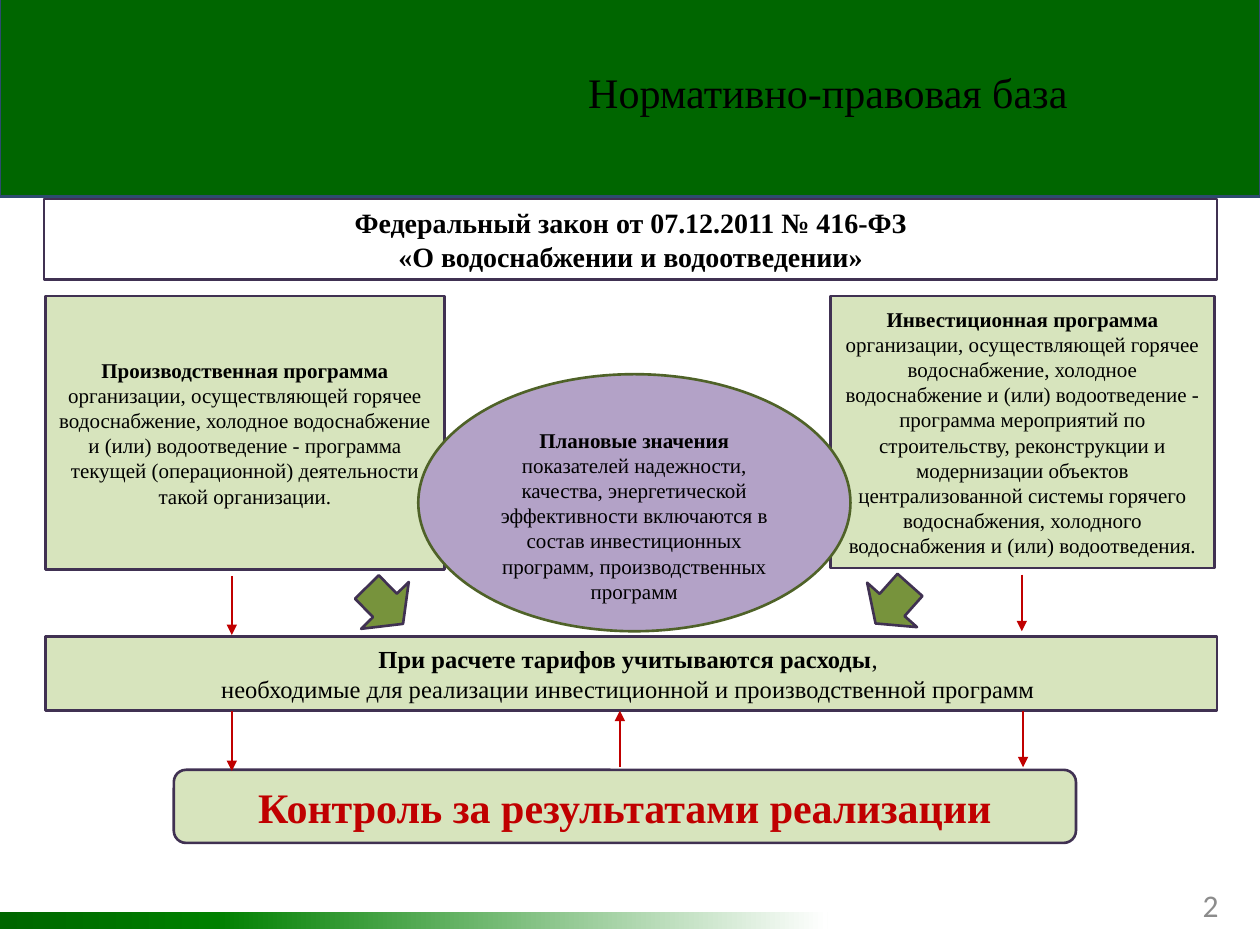
import copy
from typing import NamedTuple

import pptx
import pptx.dml.color
import pptx.enum.dml
import pptx.enum.shapes
import pptx.enum.text
import pptx.oxml
import pptx.oxml.ns
import pptx.util

Inches = pptx.util.Inches
Pt = pptx.util.Pt
Kind = pptx.enum.shapes.MSO_SHAPE
Align = pptx.enum.text.PP_ALIGN
Anchor = pptx.enum.text.MSO_ANCHOR
SERIF = "Times New Roman"
PALE, EDGE, RED, BLACK = "D7E4BD", "403152", "C00000", "000000"


class Run(NamedTuple):
    text: str
    bold: bool = False


class Box(NamedTuple):
    kind: int
    place: tuple
    lines: list  # each line is a list of runs
    size: int
    fill: str = PALE
    edge: str = EDGE
    color: str = BLACK
    top: float = 0.05  # upper text inset


class Block(NamedTuple):
    place: tuple
    turn: float
    head: float


class Arrow(NamedTuple):
    x: float
    start: float
    end: float


def paint(target, color: str) -> None:
    """Set a font colour or make a fill solid."""
    if hasattr(target, "solid"):
        target.solid()
        target = target.fore_color
    else:
        target = target.color
    target.rgb = pptx.dml.color.RGBColor.from_string(color)


def style(run, size: int, color: str, bold: bool = False, font: str = SERIF) -> None:
    run.font.name, run.font.size, run.font.bold = font, Pt(size), bold
    paint(run.font, color)


def add_form(slide, kind: int, place: tuple, fill: str, edge: str):
    form = slide.shapes.add_shape(kind, *map(Inches, place))
    form.shadow.inherit = False
    paint(form.fill, fill)
    paint(form.line.fill, edge)
    form.line.width = Pt(1.5)
    return form


def add_box(slide, box: Box) -> None:
    form = add_form(slide, box.kind, box.place, box.fill, box.edge)
    frame = form.text_frame
    frame.word_wrap = True
    frame.vertical_anchor = Anchor.MIDDLE
    frame.margin_top = Inches(box.top)
    for i, line in enumerate(box.lines):
        para = frame.add_paragraph() if i else frame.paragraphs[0]
        para.alignment = Align.CENTER
        for item in line:
            run = para.add_run()
            run.text = item.text
            style(run, box.size, box.color, item.bold)


def add_block(slide, block: Block) -> None:
    form = add_form(slide, Kind.RIGHT_ARROW, block.place, "77933C", EDGE)
    form.rotation = block.turn
    form.adjustments[1] = block.head


def add_arrow(slide, arrow: Arrow) -> None:
    x = Inches(arrow.x)
    line = slide.shapes.add_connector(
        pptx.enum.shapes.MSO_CONNECTOR.STRAIGHT,
        x, Inches(arrow.start), x, Inches(arrow.end))
    paint(line.line.fill, RED)
    line.line.width = Pt(1)
    tip = pptx.oxml.parse_xml(
        '<a:tailEnd %s type="triangle"/>' % pptx.oxml.ns.nsdecls("a"))
    line.line._get_or_add_ln().append(tip)
    line._element.spPr.append(pptx.oxml.parse_xml(
        "<a:effectLst %s/>" % pptx.oxml.ns.nsdecls("a")))


def add_strip(slide) -> None:
    """Fading strip along the foot of the slide."""
    strip = add_form(slide, Kind.RECTANGLE, (0, 7.24, 6.57, 0.13), "006600", "006600")
    strip.line.fill.background()
    strip.fill.gradient()
    strip.fill.gradient_angle = 0
    first = strip._element.spPr.find(".//" + pptx.oxml.ns.qn("a:gs"))
    first.addnext(copy.deepcopy(first))
    stops = [(0, "006600"), (0.26, "008000"), (1, "FFFFFF")]
    for stop, (spot, color) in zip(strip.fill.gradient_stops, stops):
        stop.position = spot
        stop.color.rgb = pptx.dml.color.RGBColor.from_string(color)


def add_title(slide, text: str) -> None:
    title = slide.shapes.title
    title.left, title.top, title.width, title.height = map(
        Inches, (2.87, 0.29, 7.4, 0.87))
    title.text_frame.text = text
    title.text_frame.vertical_anchor = Anchor.MIDDLE
    para = title.text_frame.paragraphs[0]
    para.alignment = Align.CENTER
    style(para.runs[0], 24, BLACK)
    title._element.getparent().append(title._element)  # above the banner


def add_number(slide, text: str) -> None:
    frame = slide.shapes.add_textbox(*map(Inches, (9.17, 6.98, 0.6, 0.4))).text_frame
    frame.word_wrap = True
    frame.vertical_anchor = Anchor.MIDDLE
    frame.text = text
    frame.paragraphs[0].alignment = Align.RIGHT
    style(frame.paragraphs[0].runs[0], 18, "8C8C8C", font="Calibri")


FIRM = "организации, осуществляющей горячее водоснабжение, холодное водоснабжение и (или) водоотведение - "

BOXES = [
    Box(Kind.RECTANGLE, (0.35, 1.58, 9.31, 0.64), [
        [Run("Федеральный закон от 07.12.2011 № 416-ФЗ", True)],
        [Run("«О водоснабжении и водоотведении»", True)]], 16, fill="FFFFFF"),
    Box(Kind.RECTANGLE, (0.36, 2.35, 3.17, 2.17), [
        [Run("Производственная программа", True)],
        [Run(FIRM + "программа текущей (операционной) деятельности такой организации.")]], 12),
    Box(Kind.RECTANGLE, (6.59, 2.35, 3.05, 2.16), [
        [Run("Инвестиционная программа", True)],
        [Run(FIRM + "программа мероприятий по строительству, реконструкции и модернизации "
             "объектов централизованной системы горячего водоснабжения, холодного "
             "водоснабжения и (или) водоотведения.")]], 12),
    Box(Kind.RECTANGLE, (0.36, 5.05, 9.3, 0.59), [
        [Run("При расчете тарифов учитываются расходы", True), Run(", ")],
        [Run("необходимые для реализации инвестиционной и производственной программ ")]], 14),
    Box(Kind.OVAL, (3.32, 2.97, 3.43, 2.04), [
        [Run("Плановые значения ", True),
         Run("показателей надежности, качества, энергетической эффективности включаются "
             "в состав инвестиционных программ, производственных программ")]],
        12, fill="B3A2C7", edge="4F6228", top=0.25),
    Box(Kind.ROUNDED_RECTANGLE, (1.38, 6.11, 7.16, 0.58), [
        [Run("Контроль за результатами реализации", True)]], 24, color=RED),
]

BLOCKS = [
    Block((2.85, 4.54, 0.41, 0.53), 45.5, 0.5),
    Block((6.88, 4.53, 0.41, 0.53), 131.7, 0.48),
]

ARROWS = [
    Arrow(8.11, 4.56, 5.01), Arrow(1.84, 4.57, 5.04),
    Arrow(8.12, 5.64, 6.09), Arrow(1.84, 5.64, 6.12),
    Arrow(4.92, 6.09, 5.64),
]


def main() -> None:
    deck = pptx.Presentation()
    deck.slide_width, deck.slide_height = Inches(10), Inches(7.5)
    slide = deck.slides.add_slide(deck.slide_layouts[5])

    # Banner, foot strip, title and page number
    add_form(slide, Kind.RECTANGLE, (0, -0.03, 10, 1.59), "006600", "2E4B6F")
    add_strip(slide)
    add_number(slide, "2")
    add_title(slide, "Нормативно-правовая база")

    # Scheme of the legal base
    for block in BLOCKS:
        add_block(slide, block)
    for box in BOXES:
        add_box(slide, box)
    for arrow in ARROWS:
        add_arrow(slide, arrow)

    deck.save("out.pptx")


if __name__ == "__main__":
    main()
